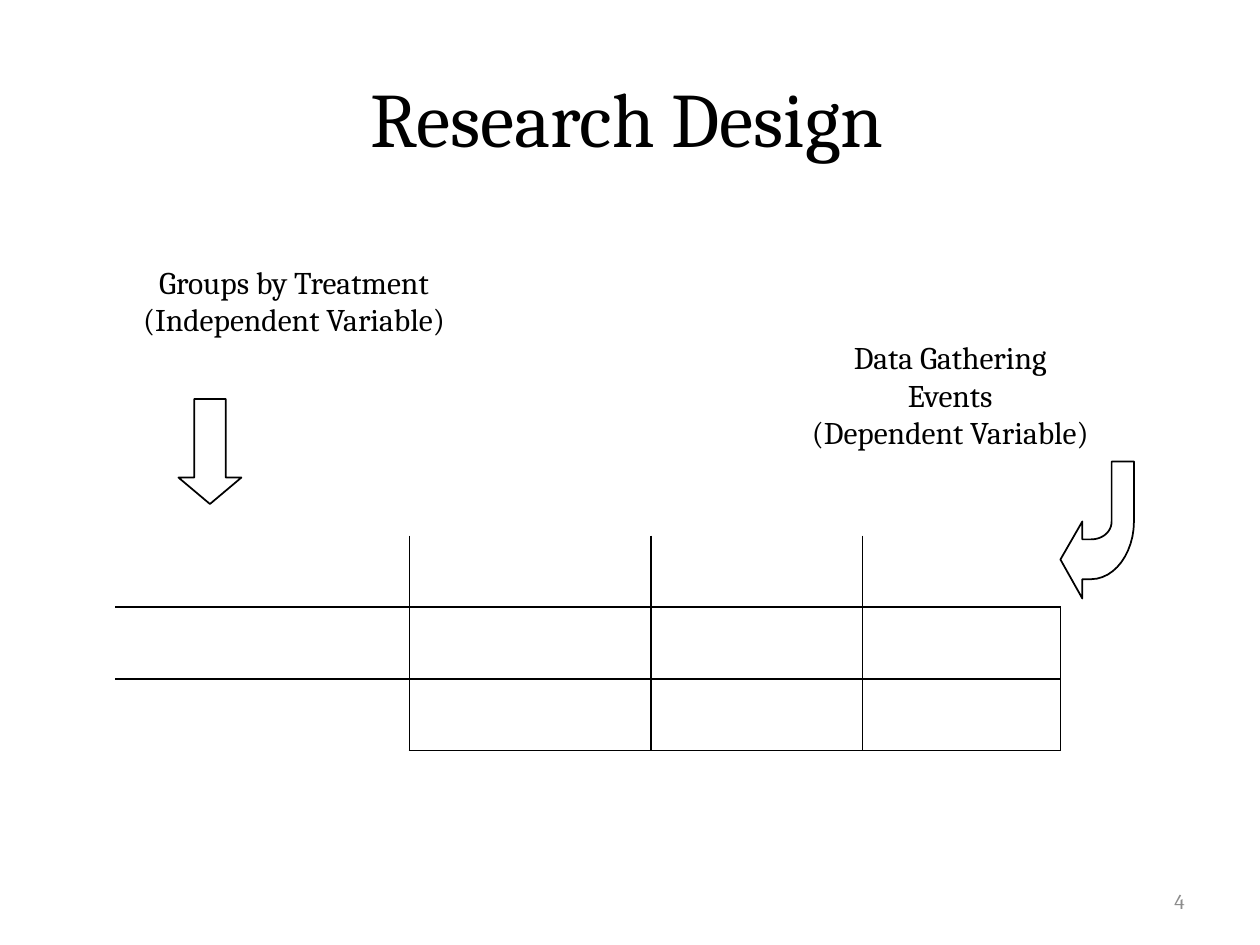
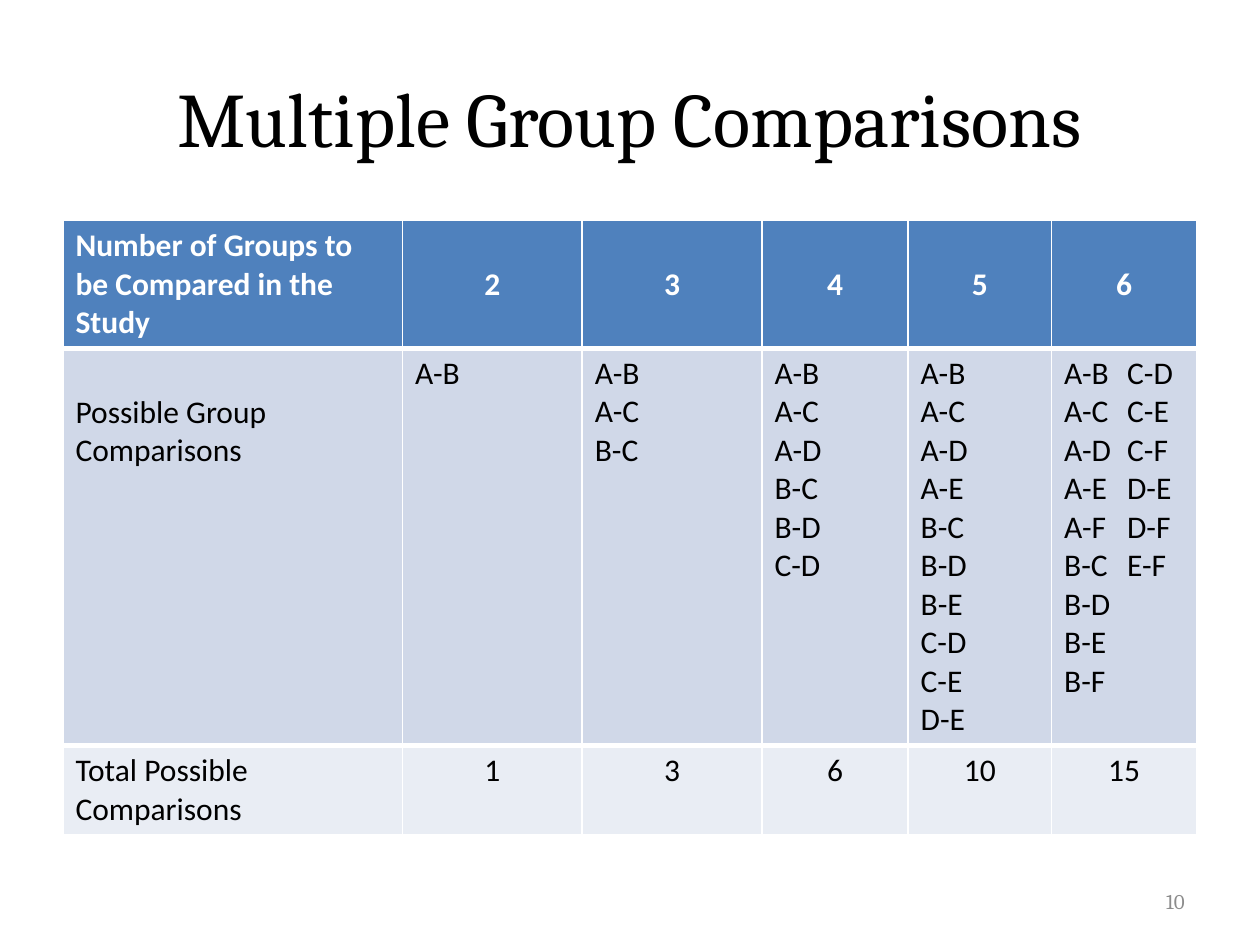
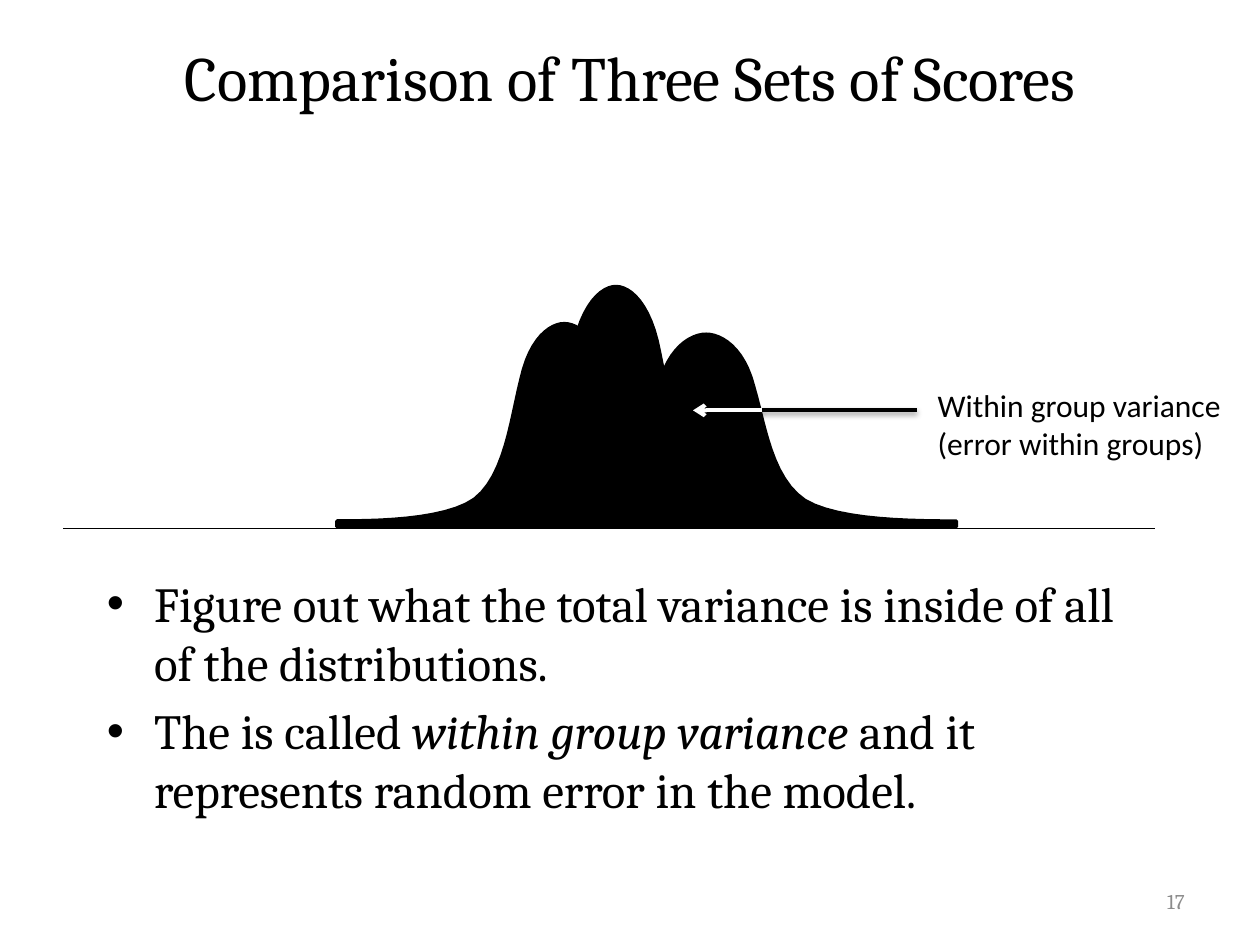
from itertools import combinations, zip_longest

from lxml import etree
from pptx import Presentation
from pptx import util as u
from pptx.dml.color import RGBColor
from pptx.enum import shapes, text
from pptx.oxml import ns

Pt = u.Pt
BLACK = RGBColor(0, 0, 0)
WHITE = RGBColor(255, 255, 255)
GRAY = RGBColor(0x8C, 0x8C, 0x8C)
HEADER_BLUE = RGBColor(0x4F, 0x81, 0xBD)
BAND_DARK = RGBColor(0xD0, 0xD8, 0xE8)
BAND_LIGHT = RGBColor(0xE9, 0xED, 0xF4)
LEFT, CENTER, RIGHT = text.PP_ALIGN.LEFT, text.PP_ALIGN.CENTER, text.PP_ALIGN.RIGHT
MIDDLE, TOP = text.MSO_ANCHOR.MIDDLE, text.MSO_ANCHOR.TOP


def add_text(frame, content, size=18, font="Calibri", color=BLACK, align=LEFT,
             anchor=TOP, bold=False, bullet=False, tab=None):
    frame.word_wrap = True
    frame.vertical_anchor = anchor
    for number, line in enumerate(content.split("\n")):
        paragraph = frame.add_paragraph() if number else frame.paragraphs[0]
        paragraph.alignment = align
        properties = paragraph._p.get_or_add_pPr()
        if bullet:
            properties.set("marL", str(Pt(27)))
            properties.set("indent", str(Pt(-27)))
            etree.SubElement(properties, ns.qn("a:buFont"), typeface="Arial")
            etree.SubElement(properties, ns.qn("a:buChar"), char="•")
            paragraph.space_before = Pt(5.6)
        if tab:
            stops = etree.SubElement(properties, ns.qn("a:tabLst"))
            etree.SubElement(stops, ns.qn("a:tab"), pos=str(Pt(tab)), algn="l")
        for part, words in enumerate(line.split("*")):
            run = paragraph.add_run()
            run.text = words
            run.font.size = Pt(size)
            run.font.name = font
            run.font.color.rgb = color
            run.font.bold = bold
            run.font.italic = part % 2 == 1


def add_outline(slide, start, segments, line_width, fill=None, steps=12):
    points = [start]
    for segment in segments:
        if len(segment) == 1:
            points.append(segment[0])
            continue
        corners = [points[-1], *segment]
        for step in range(1, steps + 1):
            t = step / steps
            weights = ((1 - t) ** 3, 3 * t * (1 - t) ** 2, 3 * t * t * (1 - t), t ** 3)
            points.append(tuple(sum(w * corner[axis] for w, corner in zip(weights, corners))
                                for axis in (0, 1)))
    vertices = [(Pt(x), Pt(y)) for x, y in points]
    builder = slide.shapes.build_freeform(*vertices[0])
    builder.add_line_segments(vertices[1:], close=True)
    shape = builder.convert_to_shape()
    shape.shadow.inherit = False
    if fill is None:
        shape.fill.background()
    else:
        shape.fill.solid()
        shape.fill.fore_color.rgb = fill
    shape.line.color.rgb = BLACK
    shape.line.width = Pt(line_width)


presentation = Presentation()
presentation.slide_width, presentation.slide_height = Pt(720), Pt(540)

slides = []
for title, number, size, (left, top, width, height) in (
    ("Research Design", 4, 44, (36, 21.6, 648, 90)),
    ("Multiple Group Comparisons", 10, 44, (36, 21.6, 648, 90)),
    ("Comparison of Three Sets of Scores", 17, 36, (54, 7.5, 612, 72)),
):
    slide = presentation.slides.add_slide(presentation.slide_layouts[5])
    shape = slide.shapes.title
    shape.left, shape.top, shape.width, shape.height = Pt(left), Pt(top), Pt(width), Pt(height)
    add_text(shape.text_frame, title, size=size, font="Cambria", align=CENTER, anchor=MIDDLE)
    page_box = slide.shapes.add_textbox(Pt(516), Pt(500.5), Pt(168), Pt(28.75))
    add_text(page_box.text_frame, str(number), size=12, font="Cambria", color=GRAY,
             align=RIGHT, anchor=MIDDLE)
    slides.append(slide)
design_slide, groups_slide, scores_slide = slides
design_slide.shapes.title.text_frame.margin_right = Pt(10.4)

column_widths = (168, 138, 121, 113)
design_table = design_slide.shapes.add_table(
    3, 4, Pt(66), Pt(306), Pt(sum(column_widths)), Pt(123)).table
design_table.first_row = design_table.horz_banding = False
for column, width in zip(design_table.columns, column_widths):
    column.width = Pt(width)
for row in range(3):
    design_table.rows[row].height = Pt(41)
    for column in range(4):
        cell = design_table.cell(row, column)
        properties = cell._tc.get_or_add_tcPr()
        for side, drawn in (("L", column > 0), ("R", column < 3 or row > 0),
                            ("T", row > 0), ("B", row < 2 or column > 0)):
            border = etree.SubElement(properties, ns.qn(f"a:ln{side}"), w=str(Pt(1)))
            if drawn:
                solid = etree.SubElement(border, ns.qn("a:solidFill"))
                etree.SubElement(solid, ns.qn("a:srgbClr"), val=str(BLACK))
            else:
                etree.SubElement(border, ns.qn("a:noFill"))
        cell.fill.background()

for label, left, top, width, height in (
    ("Groups by Treatment\n(Independent Variable)", 30, 150, 276, 63),
    ("Data Gathering Events\n(Dependent Variable)", 459, 193, 168, 66),
):
    box = design_slide.shapes.add_textbox(Pt(left), Pt(top), Pt(width), Pt(height))
    frame = box.text_frame
    frame.margin_top = frame.margin_bottom = 0
    frame.margin_left = frame.margin_right = Pt(3.5)
    add_text(frame, label, font="Cambria", align=CENTER)

down_arrow = design_slide.shapes.add_shape(
    shapes.MSO_SHAPE.DOWN_ARROW, Pt(102), Pt(228), Pt(36), Pt(60))
down_arrow.adjustments[0] = 0.5
down_arrow.adjustments[1] = 0.42
down_arrow.shadow.inherit = False
down_arrow.fill.background()
down_arrow.line.color.rgb = BLACK
down_arrow.line.width = Pt(1)

add_outline(design_slide, (606, 319.75), [
    [(618.5, 342)], [(618.5, 331)], [(623.5, 331)],
    [(637, 331), (648, 316), (648, 298)],
    [(648, 263.75)], [(635.25, 263.75)], [(635.25, 298)],
    [(635.25, 304), (630, 308.25), (623.5, 308.25)],
    [(618.5, 308.25)], [(618.5, 298)],
], line_width=1)

group_counts = range(2, 7)
column_widths = (194, 102.75, 102.75, 83.5, 82, 83)
groups_table = groups_slide.shapes.add_table(
    3, 6, Pt(36), Pt(126), Pt(sum(column_widths)), Pt(351)).table
for column, width in zip(groups_table.columns, column_widths):
    column.width = Pt(width)

pair_texts, totals = [], []
for count in group_counts:
    pairs = ["-".join(pair) for pair in combinations("ABCDEF"[:count], 2)]
    split = 9 if count == 6 else len(pairs)
    rows = zip_longest(pairs[:split], pairs[split:])
    pair_texts.append("\n".join("\t".join(filter(None, row)) for row in rows))
    totals.append(str(len(pairs)))

for row, (height, fill, color, align, anchor, contents) in enumerate((
    (73, HEADER_BLUE, WHITE, CENTER, MIDDLE,
     ["Number of Groups to be Compared in the Study", *map(str, group_counts)]),
    (227, BAND_DARK, BLACK, LEFT, TOP, ["Possible Group Comparisons", *pair_texts]),
    (51, BAND_LIGHT, BLACK, CENTER, TOP, ["Total Possible Comparisons", *totals]),
)):
    groups_table.rows[row].height = Pt(height)
    for column, content in enumerate(contents):
        cell = groups_table.cell(row, column)
        if row < 2:
            side = "B" if row == 0 else "T"
            border = etree.SubElement(cell._tc.get_or_add_tcPr(), ns.qn(f"a:ln{side}"),
                                      w=str(Pt(3)))
            solid = etree.SubElement(border, ns.qn("a:solidFill"))
            etree.SubElement(solid, ns.qn("a:srgbClr"), val=str(WHITE))
        cell.fill.solid()
        cell.fill.fore_color.rgb = fill
        add_text(cell.text_frame, content, color=color, bold=row == 0,
                 align=align if column else LEFT, tab=36 if "\t" in content else None)
        cell.vertical_anchor = anchor
groups_table.cell(1, 0).margin_top = Pt(25.6)

body = scores_slide.shapes.add_textbox(Pt(54), Pt(324), Pt(612), Pt(162))
add_text(body.text_frame,
         "Figure out what the total variance is inside of all of the distributions.\n"
         "The is called *within group variance *and it represents random error in the model.",
         size=28, font="Cambria", bullet=True)

half_bell = [(1, 1), (0.85, 1), (0.53, 1), (0.395, 0.89), (0.26, 0.77), (0.235, 0.485),
             (0.19, 0.28), (0.15, 0.07), (0.06, 0), (0, 0)]
whole_bell = [(-x, y) for x, y in half_bell] + half_bell[-2::-1]
foot, ground = 297.75, 301
for center, reach, peak in ((322.5, 130, 185), (352, 131, 163.75), (403.5, 143, 191)):
    curve = [(center + reach * x, peak + (foot - peak) * y) for x, y in whole_bell]
    segments = [curve[i:i + 3] for i in range(1, len(curve), 3)]
    segments += [[(center + reach, ground)], [(center - reach, ground)]]
    add_outline(scores_slide, curve[0], segments, line_width=2, fill=BLACK)

label_box = scores_slide.shapes.add_textbox(Pt(528.75), Pt(217.25), Pt(181), Pt(51))
add_text(label_box.text_frame, "Within group variance\n(error within groups)")

lines = []
for start, end, y, color, width in ((36, 660, 302, BLACK, 0.75),
                                    (524, 435, 234.5, BLACK, 2.25),
                                    (435.5, 396, 234.5, WHITE, 2.25)):
    line = scores_slide.shapes.add_connector(
        shapes.MSO_CONNECTOR.STRAIGHT, Pt(start), Pt(y), Pt(end), Pt(y))
    line.line.color.rgb = color
    line.line.width = Pt(width)
    lines.append(line)
baseline, pointer_shaft, pointer_tip = lines
etree.SubElement(baseline._element.spPr, ns.qn("a:effectLst"))
etree.SubElement(pointer_tip.line._get_or_add_ln(), ns.qn("a:tailEnd"), type="arrow")

presentation.save("out.pptx")
